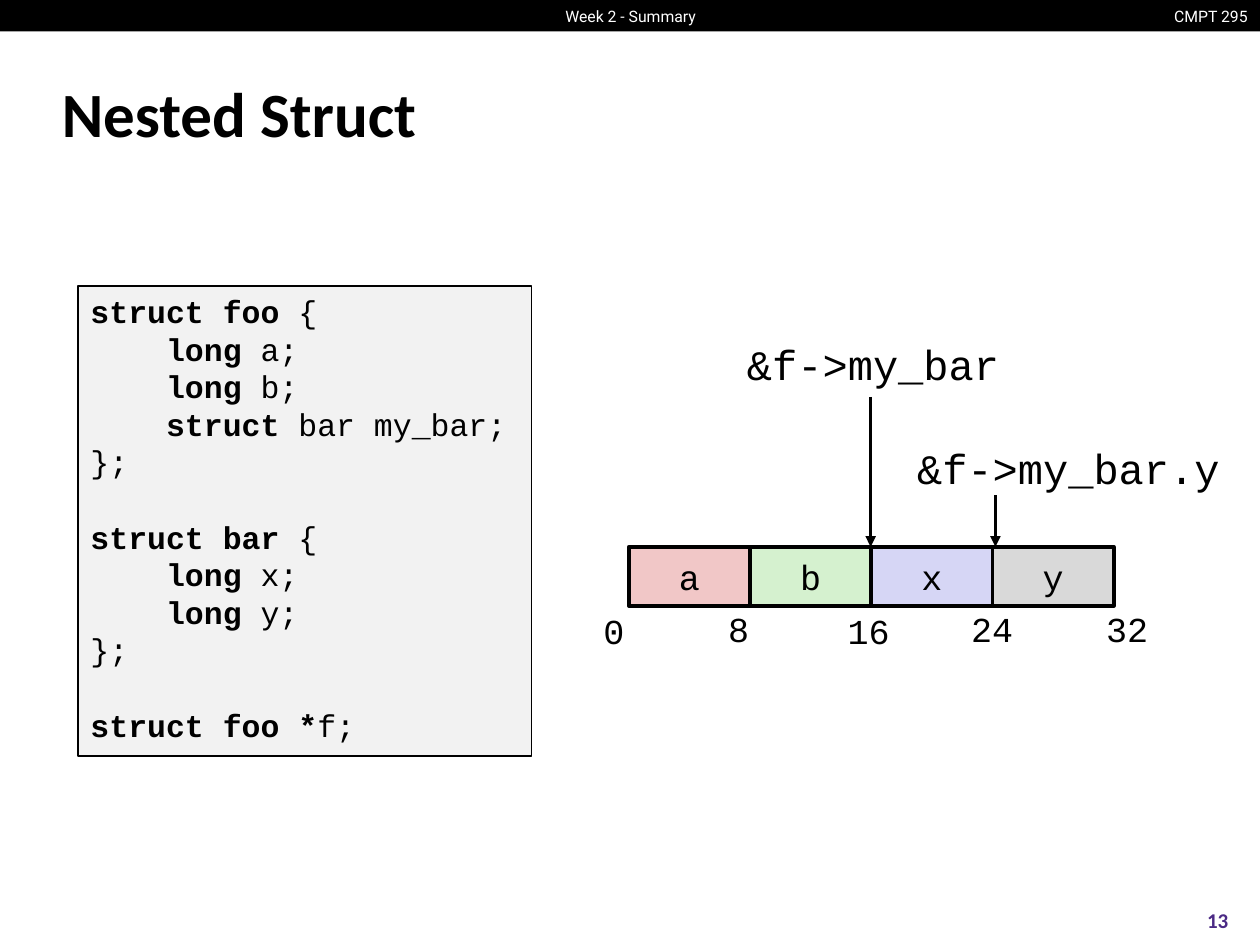
from dataclasses import dataclass
from typing import NamedTuple, Optional

from lxml.etree import SubElement
from pptx import Presentation
from pptx.dml.color import RGBColor
from pptx.enum.shapes import MSO_CONNECTOR, MSO_SHAPE
from pptx.enum.text import MSO_ANCHOR, PP_ALIGN
from pptx.oxml.ns import qn
from pptx.util import Inches, Pt

# The slide is a grid of 100 columns by 75 rows
COLUMNS, ROWS = 100, 75
SLIDE_WIDTH, SLIDE_HEIGHT = Inches(10), Inches(7.5)


@dataclass(frozen=True)
class Theme:
    black: str = "000000"
    white: str = "FFFFFF"
    purple: str = "4B2A85"
    code_fill: str = "F2F2F2"
    title_font: str = "Calibri"
    code_font: str = "Courier New"
    header_font: str = "Roboto"
    title_size: int = 36
    pointer_size: int = 24
    cell_size: int = 20
    code_size: int = 18
    code_line: float = 21.5
    number_size: int = 12
    header_size: int = 9


class Area(NamedTuple):
    column: float
    row: float
    columns: float
    rows: float


class Style(NamedTuple):
    name: str
    size: float
    color: str
    bold: bool = False


class Field(NamedTuple):
    name: str
    fill: str


class Offset(NamedTuple):
    label: str
    area: Area


class Pointer(NamedTuple):
    label: str
    area: Area
    column: float
    top: float


class CodeLine(NamedTuple):
    keyword: str
    rest: str
    indented: bool = False
    new_block: bool = False


THEME = Theme()
CODE = Style(THEME.code_font, THEME.code_size, THEME.black)
CELL = Style(THEME.code_font, THEME.cell_size, THEME.black)
POINTER = Style(THEME.code_font, THEME.pointer_size, THEME.black)
HEADER = Style(THEME.header_font, THEME.header_size, THEME.white)
TITLE = Style(THEME.title_font, THEME.title_size, THEME.black, True)
NUMBER = Style(THEME.title_font, THEME.number_size, THEME.purple, True)

# Memory layout: four equal fields in one row
MEMORY = Area(49.9, 43.4, 38.5, 4.7)
FIELDS = [Field("a", "F1C7C7"), Field("b", "D5F1CF"),
          Field("x", "D6D6F5"), Field("y", "D9D9D9")]
OFFSETS = [Offset("0", Area(46.9, 47.9, 3.7, 4.3)),
           Offset("8", Area(56.8, 47.7, 3.7, 4.3)),
           Offset("16", Area(66.3, 47.9, 5.4, 4.3)),
           Offset("24", Area(76.1, 47.7, 5.4, 4.3)),
           Offset("32", Area(86.8, 47.7, 5.4, 4.3))]
POINTERS = [Pointer("&f->my_bar", Area(58.3, 26.4, 22.2, 5), 69.1, 31.5),
            Pointer("&f->my_bar.y", Area(71.8, 34.6, 26.2, 5), 79, 39.3)]
CODE_LINES = [
    CodeLine("struct foo", " {"),
    CodeLine("long", " a;", indented=True),
    CodeLine("long", " b;", indented=True),
    CodeLine("struct", " bar my_bar;", indented=True),
    CodeLine("", "};"),
    CodeLine("struct bar", " {", new_block=True),
    CodeLine("long", " x;", indented=True),
    CodeLine("long", " y;", indented=True),
    CodeLine("", "};"),
    CodeLine("struct foo *", "f;", new_block=True),
]


def across(columns: float) -> int:
    return round(SLIDE_WIDTH * columns / COLUMNS)


def down(rows: float) -> int:
    return round(SLIDE_HEIGHT * rows / ROWS)


def place(area: Area) -> tuple:
    return (across(area.column), down(area.row),
            across(area.columns), down(area.rows))


def set_all(target, values: dict) -> None:
    for attribute, value in values.items():
        setattr(target, attribute, value)


def add_run(paragraph, text: str, style: Style) -> None:
    run = paragraph.add_run()
    run.text = text
    set_all(run.font, {"name": style.name, "size": Pt(style.size), "bold": style.bold})
    run.font.color.rgb = RGBColor.from_string(style.color)


def write(shape, text: str, style: Style, align=PP_ALIGN.LEFT,
          anchor=MSO_ANCHOR.TOP, wrap: bool = False) -> None:
    set_all(shape.text_frame, {"word_wrap": wrap, "vertical_anchor": anchor})
    paragraph = shape.text_frame.paragraphs[0]
    paragraph.alignment = align
    add_run(paragraph, text, style)


def add_label(slide, area: Area, text: str, style: Style, **layout) -> None:
    write(slide.shapes.add_textbox(*place(area)), text, style, **layout)


def add_rectangle(slide, area: Area, fill: str, line_width: Optional[float] = None):
    rectangle = slide.shapes.add_shape(MSO_SHAPE.RECTANGLE, *place(area))
    rectangle.shadow.inherit = False
    rectangle.fill.solid()
    rectangle.fill.fore_color.rgb = RGBColor.from_string(fill)
    if line_width is None:
        rectangle.line.fill.background()
    else:
        rectangle.line.color.rgb = RGBColor.from_string(THEME.black)
        rectangle.line.width = Pt(line_width)
    return rectangle


def add_arrow(slide, column: float, top: float, bottom: float) -> None:
    arrow = slide.shapes.add_connector(MSO_CONNECTOR.STRAIGHT, across(column),
                                       down(top), across(column), down(bottom))
    arrow.line.color.rgb = RGBColor.from_string(THEME.black)
    arrow.line.width = Pt(2)
    SubElement(arrow.line._get_or_add_ln(), qn("a:tailEnd"), type="triangle")
    SubElement(arrow._element.spPr, qn("a:effectLst"))


def add_code(slide, area: Area, lines: list) -> None:
    frame = add_rectangle(slide, area, THEME.code_fill, 1).text_frame
    set_all(frame, {"word_wrap": True, "vertical_anchor": MSO_ANCHOR.TOP})
    four_characters = Pt(4 * 0.6 * THEME.code_size)
    for index, line in enumerate(lines):
        paragraph = frame.add_paragraph() if index else frame.paragraphs[0]
        set_all(paragraph, {
            "alignment": PP_ALIGN.LEFT,
            "line_spacing": Pt(THEME.code_line),
            "space_before": Pt(THEME.code_line if line.new_block else 0)})
        if line.indented:
            paragraph._p.get_or_add_pPr().set("marL", str(four_characters))
        if line.keyword:
            add_run(paragraph, line.keyword, CODE._replace(bold=True))
        add_run(paragraph, line.rest, CODE)


def main() -> None:
    deck = Presentation()
    set_all(deck, {"slide_width": SLIDE_WIDTH, "slide_height": SLIDE_HEIGHT})
    slide = deck.slides.add_slide(deck.slide_layouts[5])

    # Header bar, title and slide number
    add_rectangle(slide, Area(0, 0, COLUMNS, 2.5), THEME.black)
    middle = {"anchor": MSO_ANCHOR.MIDDLE}
    add_label(slide, Area(91.9, 0, 8.1, 2.5), "CMPT 295", HEADER, align=PP_ALIGN.RIGHT, **middle)
    add_label(slide, Area(43, 0, 14.1, 2.5), "Week 2 - Summary", HEADER,
              align=PP_ALIGN.CENTER, **middle)
    title = slide.shapes.title
    set_all(title, dict(zip(("left", "top", "width", "height"),
                            place(Area(3.9, 4.8, 91.9, 8.3)))))
    write(title, "Nested Struct", TITLE, wrap=True, **middle)
    add_label(slide, Area(93.3, 71, 6.7, 4), "13", NUMBER,
              align=PP_ALIGN.CENTER, wrap=True, **middle)

    # Struct definitions
    add_code(slide, Area(6.2, 22.7, 36, 37.3), CODE_LINES)

    # Pointers into the memory row, then the row with its byte offsets
    for pointer in POINTERS:
        add_arrow(slide, pointer.column, pointer.top, MEMORY.row)
        add_label(slide, pointer.area, pointer.label, POINTER)
    pitch = MEMORY.columns / len(FIELDS)
    for index, field in enumerate(FIELDS):
        area = MEMORY._replace(column=MEMORY.column + index * pitch, columns=pitch)
        write(add_rectangle(slide, area, field.fill, 2), field.name, CELL,
              align=PP_ALIGN.CENTER, **middle)
    for offset in OFFSETS:
        add_label(slide, offset.area, offset.label, CELL)

    deck.save("out.pptx")


if __name__ == "__main__":
    main()
